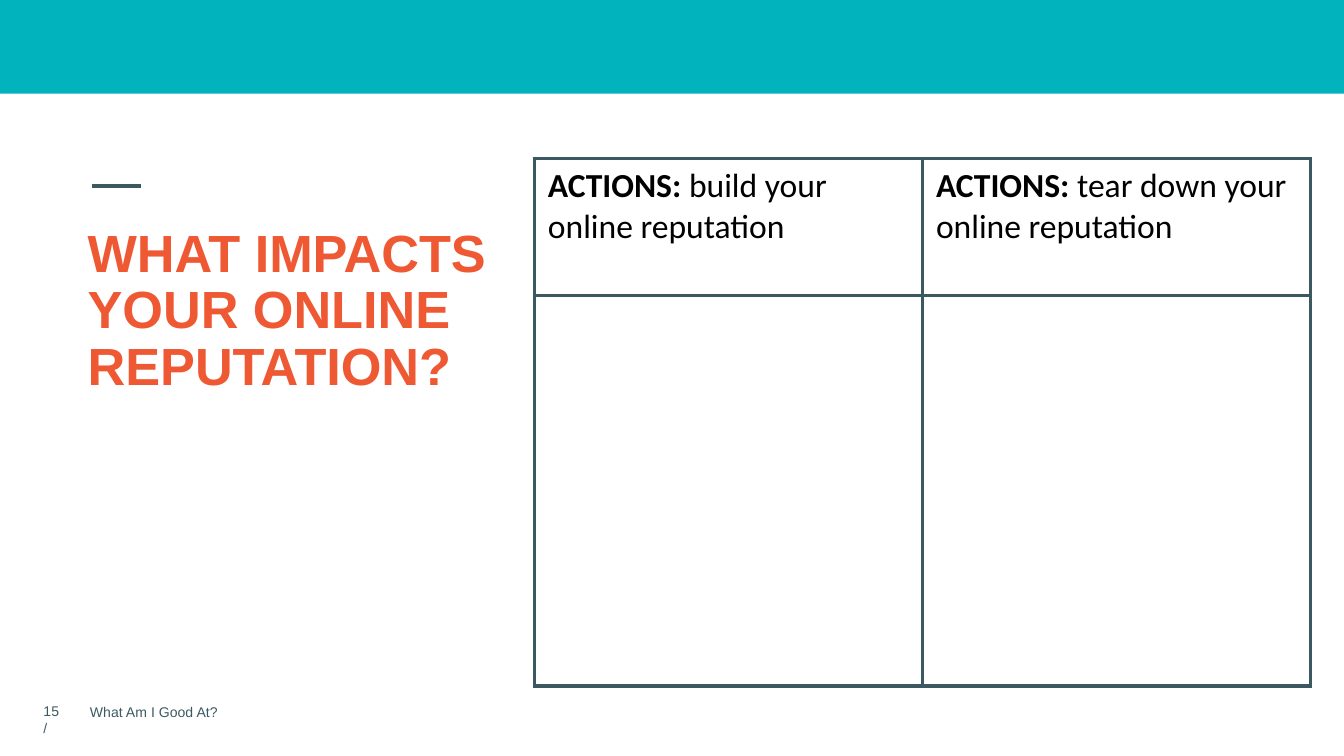
from typing import NamedTuple

from lxml.etree import SubElement as Sub
from pptx import Presentation
from pptx.dml.color import RGBColor
from pptx.enum.shapes import MSO_CONNECTOR as Conn, MSO_SHAPE as Shape
from pptx.oxml.ns import qn
from pptx.util import Inches, Pt

TEAL = RGBColor(0x00, 0xB3, 0xBC)
SLATE = RGBColor(0x3C, 0x59, 0x61)
CORAL = RGBColor(0xEE, 0x59, 0x34)
BLACK = RGBColor(0x00, 0x00, 0x00)
WIDE = Inches(10)
HIGH = WIDE * 9 // 16
RULE = Pt(2.25)


class Area(NamedTuple):
    left: float
    top: float
    width: float
    height: float


class Label(NamedTuple):
    text: str
    area: Area
    size: float
    color: RGBColor
    bold: bool = False
    space: float = 1.0


LABELS = [
    Label("15 /", Area(2.25, 92.1, 3.7, 5.33), 7.5, SLATE),
    Label("WHAT IMPACTS YOUR ONLINE REPUTATION?",
          Area(5.54, 29.2, 32.2, 57.6), 28, CORAL, True, 0.9),
    Label("What Am I Good At?", Area(5.7, 92.15, 26.2, 5.33), 7.5, SLATE),
]
BAND = Area(0, 0, 100, 12.38)
DASH = Area(6.84, 24.64, 3.65, 0)
GRID = Area(39.77, 20.97, 57.75, 69.8)
ROWS = (0.26, 0.74)
HEADS = ("build your online reputation", "tear down your online reputation")


def place(area: Area) -> tuple[int, int, int, int]:
    return (int(WIDE * area.left / 100), int(HIGH * area.top / 100),
            int(WIDE * area.width / 100), int(HIGH * area.height / 100))


def style(font, name: str, size: float, color: RGBColor, bold: bool) -> None:
    font.name, font.size, font.bold = name, Pt(size), bold
    font.color.rgb = color


def draw_band(slide) -> None:
    band = slide.shapes.add_shape(Shape.RECTANGLE, *place(BAND))
    band.shadow.inherit = False
    band.fill.solid()
    band.fill.fore_color.rgb = TEAL
    band.line.fill.background()


def draw_dash(slide) -> None:
    x, y, w, h = place(DASH)
    dash = slide.shapes.add_connector(Conn.STRAIGHT, x, y, x + w, y + h)
    dash.line.color.rgb = SLATE
    dash.line.width = RULE
    Sub(dash._element.spPr, qn("a:effectLst"))


def draw_label(slide, label: Label) -> None:
    frame = slide.shapes.add_textbox(*place(label.area)).text_frame
    frame.word_wrap = True
    frame.text = label.text
    para = frame.paragraphs[0]
    para.line_spacing = label.space
    style(para.runs[0].font, "Arial", label.size, label.color, label.bold)


def edge(cell) -> None:
    props = cell._tc.get_or_add_tcPr()
    for side in ("lnL", "lnR", "lnT", "lnB"):
        line = Sub(props, qn(f"a:{side}"), w=str(RULE))
        fill = Sub(line, qn("a:solidFill"))
        Sub(fill, qn("a:srgbClr"), val=str(SLATE))
    cell.fill.background()


def draw_table(slide) -> None:
    area = place(GRID)
    table = slide.shapes.add_table(len(ROWS), len(HEADS), *area).table
    table.first_row = table.horz_banding = False
    for row, share in zip(table.rows, ROWS):
        row.height = int(area[3] * share)
    for cell in table.iter_cells():
        edge(cell)
    for col, head in enumerate(HEADS):
        para = table.cell(0, col).text_frame.paragraphs[0]
        for text, bold in (("ACTIONS: ", True), (head, False)):
            run = para.add_run()
            run.text = text
            style(run.font, "Calibri", 18, BLACK, bold)


def main() -> None:
    deck = Presentation()
    deck.slide_width, deck.slide_height = WIDE, HIGH
    slide = deck.slides.add_slide(deck.slide_layouts[6])
    draw_band(slide)
    draw_dash(slide)
    for label in LABELS:
        draw_label(slide, label)
    draw_table(slide)
    deck.save("out.pptx")


if __name__ == "__main__":
    main()
